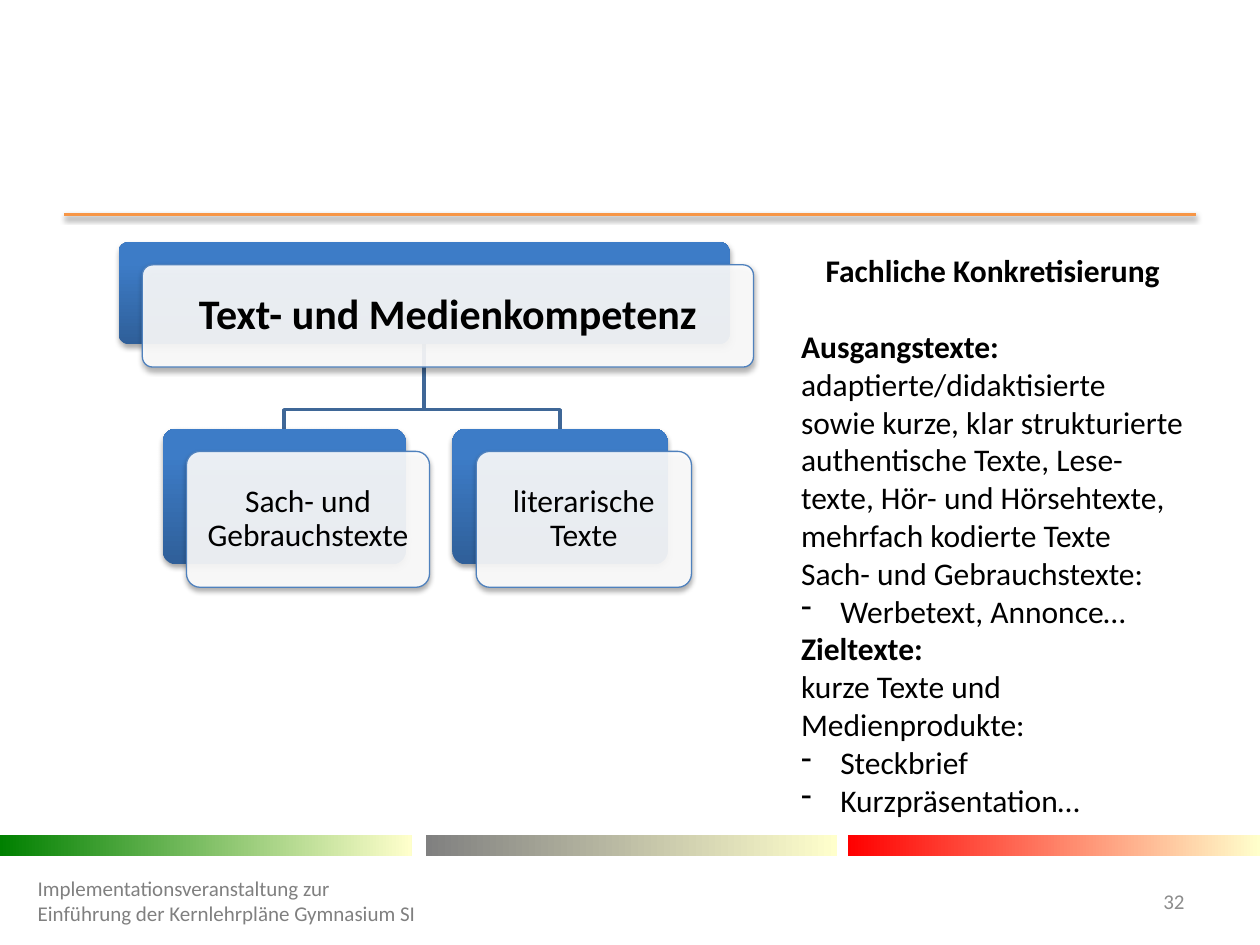
from lxml import etree
from pptx import Presentation
from pptx.dml.color import RGBColor
from pptx.enum.shapes import MSO_CONNECTOR as CONN, MSO_SHAPE as SHAPE
from pptx.enum.text import MSO_ANCHOR as ANCHOR, PP_ALIGN as ALIGN
from pptx.oxml.ns import qn
from pptx.util import Cm, Pt

CARD_SHIFT = (0.48, 0.46)  # front card relative to back card, cm


def rgb(hex_color):
    return RGBColor.from_string(hex_color)


def add_shadow(sp, opacity=35, blur=3.1, dist=1.7):
    """Give a shape or connector a soft shadow straight below it."""
    spPr = sp._element.spPr
    effects = spPr.find(qn("a:effectLst"))
    if effects is None:
        effects = etree.SubElement(spPr, qn("a:effectLst"))
    shadow = etree.SubElement(effects, qn("a:outerShdw"), blurRad=str(Pt(blur)),
                              dist=str(Pt(dist)), dir="5400000", rotWithShape="0")
    color = etree.SubElement(shadow, qn("a:srgbClr"), val="000000")
    etree.SubElement(color, qn("a:alpha"), val=str(opacity * 1000))


def set_gradient(sp, colors, angle=0, end=1.0):
    sp.fill.gradient()
    sp.fill.gradient_angle = angle
    for stop, color, pos in zip(sp.fill.gradient_stops, colors, (0, end)):
        stop.color.rgb = rgb(color)
        stop.position = pos


def add_shape(slide, kind, box):
    sp = slide.shapes.add_shape(kind, *map(Cm, box))
    sp.shadow.inherit = False
    sp.line.fill.background()
    return sp


def write(p, text, size=18, bold=False, color="000000", align=ALIGN.LEFT,
          bullet=None, after=0, spacing=None):
    """Fill a paragraph; each newline in the text is a line break."""
    if bullet:
        pPr = p._p.get_or_add_pPr()
        pPr.set("marL", str(Cm(0.79)))
        pPr.set("indent", str(-Cm(0.79)))
        etree.SubElement(pPr, qn("a:buChar"), char=bullet)
    p.alignment = align
    p.space_after = Pt(after)
    if spacing:
        p.line_spacing = spacing
    for i, line in enumerate(text.split("\n")):
        if i:
            p.add_line_break()
        r = p.add_run()
        r.text = line
        r.font.name = "Calibri"
        r.font.size = Pt(size)
        r.font.bold = bold
        r.font.color.rgb = rgb(color)


def add_text(slide, box, paragraphs, anchor=ANCHOR.TOP):
    """Add a wrapped text box from (text, format) pairs."""
    tf = slide.shapes.add_textbox(*map(Cm, box)).text_frame
    tf.word_wrap = True
    tf.vertical_anchor = anchor
    for i, (text, fmt) in enumerate(paragraphs):
        write(tf.add_paragraph() if i else tf.paragraphs[0], text, **fmt)


def add_rule(slide, x, y, width):
    line = slide.shapes.add_connector(CONN.STRAIGHT, Cm(x), Cm(y), Cm(x + width), Cm(y))
    line.line.color.rgb = rgb("F79646")
    line.line.width = Pt(2)
    add_shadow(line, opacity=38)


def add_bars(slide, y, height):
    for x, color in ((0, "008000"), (8.58, "808080"), (17.1, "FF0000")):
        bar = add_shape(slide, SHAPE.RECTANGLE, (x, y, 8.3, height))
        set_gradient(bar, (color, "FFFFCC"))


def add_card(slide, box, text, **fmt):
    """Place a blue back card and a translucent, shifted front card with text."""
    x, y, w, h = box
    back = add_shape(slide, SHAPE.ROUNDED_RECTANGLE, box)
    set_gradient(back, ("2F5F99", "3D7CC7"), angle=90, end=0.8)
    dx, dy = CARD_SHIFT
    front = add_shape(slide, SHAPE.ROUNDED_RECTANGLE, (x + dx, y + dy, w, h))
    front.fill.solid()
    front.fill.fore_color.rgb = rgb("FFFFFF")
    color = front._element.spPr.find(qn("a:solidFill"))[0]
    etree.SubElement(color, qn("a:alpha"), val="90000")
    front.line.color.rgb = rgb("4F81BD")
    front.line.width = Pt(0.75)
    for sp in (back, front):
        sp.adjustments[0] = 0.1
        add_shadow(sp)
    tf = front.text_frame
    tf.word_wrap = True
    tf.vertical_anchor = ANCHOR.MIDDLE
    tf.margin_left = tf.margin_right = tf.margin_top = tf.margin_bottom = Cm(0.25)
    write(tf.paragraphs[0], text, align=ALIGN.CENTER, spacing=0.9, **fmt)


def add_branch(slide, parent, child):
    """Draw an elbow from the parent's bottom to the child's top."""
    start_x, start_y = parent[0] + parent[2] / 2, parent[1] + parent[3]
    end_x, end_y = child[0] + child[2] / 2, child[1]
    bend_y = end_y - 0.38
    points = [(start_x, bend_y), (end_x, bend_y), (end_x, end_y)]
    builder = slide.shapes.build_freeform(Cm(start_x), Cm(start_y))
    builder.add_line_segments([(Cm(x), Cm(y)) for x, y in points], close=False)
    sp = builder.convert_to_shape()
    sp.shadow.inherit = False
    sp.fill.background()
    sp.line.color.rgb = rgb("3F6797")
    sp.line.width = Pt(2)


def add_tree(slide, x, y):
    root = (x, y, 12.32, 2.06)
    children = [((x + 0.89, y + 3.76, 4.9, 2.74), "Sach- und Gebrauchstexte"),
                ((x + 6.73, y + 3.76, 4.34, 2.74), "literarische Texte")]
    for box, _ in reversed(children):
        add_branch(slide, root, box)
    add_card(slide, root, "Text- und Medienkompetenz", size=24, bold=True)
    for box, text in children:
        add_card(slide, box, text)


def add_details(slide, box):
    bold, item = {"bold": True}, {"bullet": "-"}
    add_text(slide, box, [
        ("Fachliche Konkretisierung", {"bold": True, "align": ALIGN.CENTER, "after": 22}),
        ("Ausgangstexte:", bold),
        ("adaptierte/didaktisierte sowie kurze, klar strukturierte authentische Texte, "
         "Lese-texte, Hör- und Hörsehtexte, mehrfach kodierte Texte\n"
         "Sach- und Gebrauchstexte:", {}),
        ("Werbetext, Annonce…", item),
        ("Zieltexte:", bold),
        ("kurze Texte und Medienprodukte:", {}),
        ("Steckbrief", item),
        ("Kurzpräsentation…", item),
    ])


def add_footer(slide, y, height):
    add_text(slide, (0.51, y, 8.23, height),
             [("Implementationsveranstaltung zur Einführung der Kernlehrpläne Gymnasium SI",
               {"size": 12, "color": "808080"})], ANCHOR.MIDDLE)
    add_text(slide, (22.5, y, 1.63, height),
             [("32", {"size": 12, "color": "8C8C8C", "align": ALIGN.RIGHT})], ANCHOR.MIDDLE)


def main():
    prs = Presentation()
    prs.slide_width, prs.slide_height = Cm(25.4), Cm(19.05)
    slide = prs.slides.add_slide(prs.slide_layouts[6])
    add_rule(slide, 1.3, 4.32, 22.8)
    add_bars(slide, 16.84, 0.41)
    add_tree(slide, 2.39, 4.88)
    add_details(slide, (15.9, 4.93, 8.23, 11.79))
    add_footer(slide, 17.65, 1.02)
    prs.save("out.pptx")


if __name__ == "__main__":
    main()
